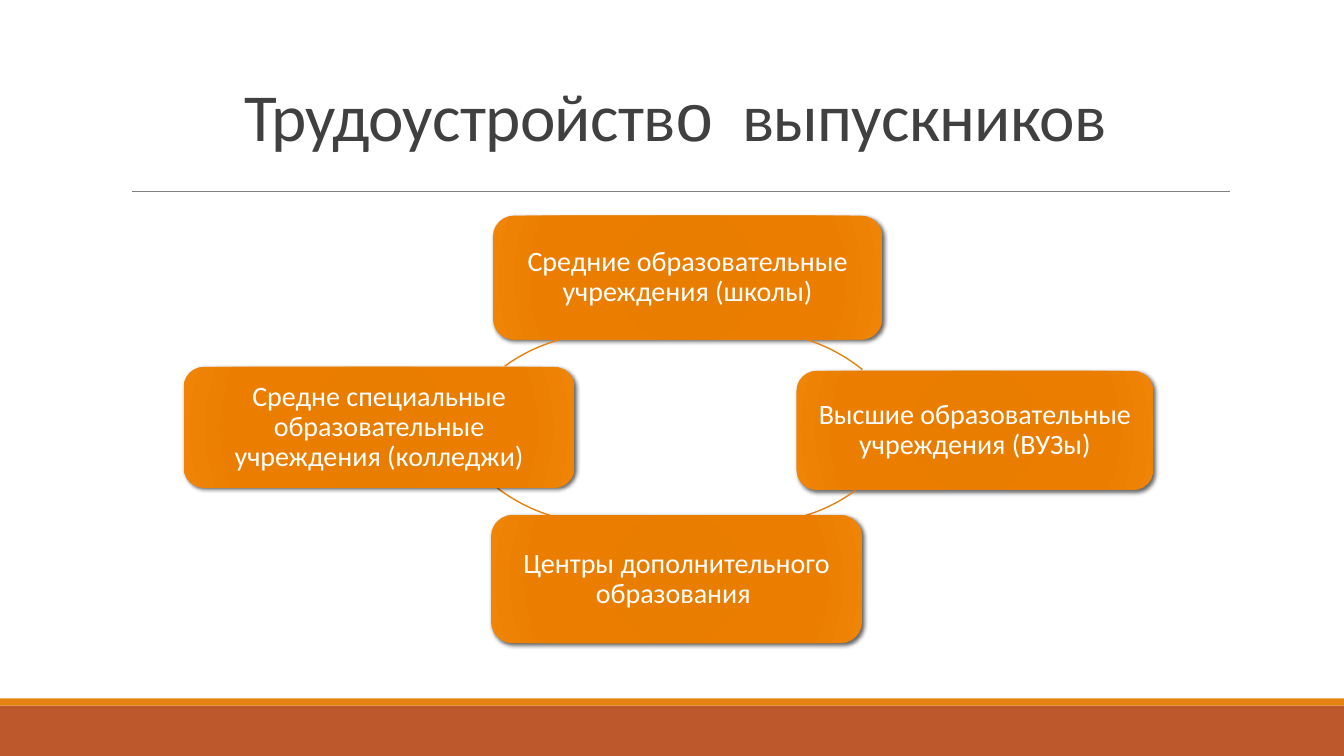
from dataclasses import dataclass

from lxml.etree import SubElement
from pptx import Presentation
from pptx.dml.color import RGBColor
from pptx.enum.shapes import MSO_CONNECTOR as Connector, MSO_SHAPE as Preset
from pptx.enum.text import MSO_ANCHOR as Anchor, MSO_AUTO_SIZE as AutoSize, PP_ALIGN as Align
from pptx.oxml.ns import qn
from pptx.util import Inches, Pt


@dataclass(frozen=True)
class Theme:
    """Colours, fonts and sizes of the slide."""
    font: str = "Calibri"
    accent_font: str = "Arial"
    title_size: int = 48
    card_size: int = 20
    title: str = "404040"
    card_text: str = "FFFFFF"
    rule: str = "808080"
    band: str = "BD582C"
    accent: str = "E48312"
    shadow: str = "000000"
    gradient: tuple = ((0, "E57B00"), (34, "E87D00"), (70, "EB7E00"), (100, "EF8407"))


THEME = Theme()

TITLE_RUNS = [
    ("Трудоустройств", THEME.font, -0.5),
    ("о", THEME.accent_font, -0.5),
    (" ", THEME.font, 10),
    ("выпускников", THEME.font, -0.5),
]

CARDS = [
    ("Средние образовательные учреждения (школы)", 4.89, 2.14, 3.86, 1.23),
    ("Высшие образовательные учреждения (ВУЗы)", 7.9, 3.68, 3.54, 1.18),
    ("Центры дополнительного образования ", 4.87, 5.11, 3.68, 1.27),
    ("Средне специальные образовательные учреждения (колледжи)", 1.82, 3.64, 3.88, 1.2),
]

ARC_SIZE = 3.38
ARCS = [
    (5.8, 3.29, 287, 309),
    (5.8, 1.81, 54, 73),
    (4.27, 1.81, 107, 127.5),
    (4.31, 3.31, 234, 254.5),
]


def color(value):
    """Turn a hex string into a colour."""
    return RGBColor.from_string(value)


def style_font(font, name, size, value):
    """Set the face, size and colour of a font."""
    font.name = name
    font.size = Pt(size)
    font.color.rgb = color(value)


def add_band(slide, top, height, fill):
    """Add a full-width bar."""
    shape = slide.shapes.add_shape(Preset.RECTANGLE, 0, Inches(top), Inches(13.33), Inches(height))
    shape.fill.solid()
    shape.fill.fore_color.rgb = color(fill)
    shape.line.fill.background()
    shape.shadow.inherit = False


def add_rule(slide):
    """Add the thin line under the title."""
    rule = slide.shapes.add_connector(
        Connector.STRAIGHT, Inches(1.31), Inches(1.9), Inches(12.2), Inches(1.9))
    rule.line.color.rgb = color(THEME.rule)
    rule.line.width = Pt(0.5)
    SubElement(rule._element.spPr, qn("a:effectLst"))


def fill_title(slide):
    """Place the title and write its runs."""
    title = slide.shapes.title
    title.left, title.top = Inches(1.2), Inches(0)
    title.width, title.height = Inches(11), Inches(1.59)
    frame = title.text_frame
    frame.auto_size = AutoSize.NONE
    frame.word_wrap = True
    frame.vertical_anchor = Anchor.BOTTOM
    paragraph = frame.paragraphs[0]
    paragraph.alignment = Align.CENTER
    paragraph.line_spacing = 0.85
    for text, font, spacing in TITLE_RUNS:
        run = paragraph.add_run()
        run.text = text
        style_font(run.font, font, THEME.title_size, THEME.title)
        run.font._element.set("spc", str(int(spacing * 100)))


def set_radial_fill(shape):
    """Fill a shape with the circular gradient of the theme."""
    shape.fill.gradient()
    gradient = shape._element.spPr.find(qn("a:gradFill"))
    for child in list(gradient):
        gradient.remove(child)
    stops = SubElement(gradient, qn("a:gsLst"))
    for position, value in THEME.gradient:
        stop = SubElement(stops, qn("a:gs"), pos=str(position * 1000))
        SubElement(stop, qn("a:srgbClr"), val=value)
    circle = SubElement(gradient, qn("a:path"), {"path": "circle"})
    SubElement(circle, qn("a:fillToRect"), {side: "100000" for side in "ltrb"})


def set_drop_shadow(shape):
    """Give a shape a soft shadow to the lower right."""
    shape.shadow.inherit = False
    effects = shape._element.spPr.find(qn("a:effectLst"))
    shadow = SubElement(effects, qn("a:outerShdw"), blurRad=str(Pt(3)), dist=str(Pt(2)),
                        dir="2700000", algn="br", rotWithShape="0")
    shade = SubElement(shadow, qn("a:srgbClr"), val=THEME.shadow)
    SubElement(shade, qn("a:alpha"), val="60000")


def add_card(slide, text, left, top, width, height):
    """Add a rounded card with centred text."""
    shape = slide.shapes.add_shape(
        Preset.ROUNDED_RECTANGLE, Inches(left), Inches(top), Inches(width), Inches(height))
    set_radial_fill(shape)
    shape.line.fill.background()
    set_drop_shadow(shape)
    frame = shape.text_frame
    frame.word_wrap = True
    frame.vertical_anchor = Anchor.MIDDLE
    frame.margin_left = frame.margin_right = Inches(0.08)
    frame.margin_top = frame.margin_bottom = Inches(0.08)
    frame.text = text
    paragraph = frame.paragraphs[0]
    paragraph.alignment = Align.CENTER
    paragraph.line_spacing = 0.9
    style_font(paragraph.runs[0].font, THEME.font, THEME.card_size, THEME.card_text)


def add_arc(slide, left, top, start, end):
    """Add a circular arc between two angles, in degrees clockwise."""
    arc = slide.shapes.add_shape(
        Preset.ARC, Inches(left), Inches(top), Inches(ARC_SIZE), Inches(ARC_SIZE))
    for index, angle in enumerate((start, end)):
        arc.adjustments[index] = angle * 0.6
    arc.fill.background()
    arc.line.color.rgb = color(THEME.accent)
    arc.line.width = Pt(1)
    arc.shadow.inherit = False


def main():
    """Build and save the slide."""
    presentation = Presentation()
    presentation.slide_width, presentation.slide_height = Inches(13.33), Inches(7.5)
    slide = presentation.slides.add_slide(presentation.slide_layouts[5])
    add_band(slide, 7, 0.5, THEME.band)
    add_band(slide, 6.93, 0.07, THEME.accent)
    add_rule(slide)
    fill_title(slide)
    for card, arc in zip(CARDS, ARCS):
        add_card(slide, *card)
        add_arc(slide, *arc)
    presentation.save("out.pptx")


if __name__ == "__main__":
    main()
